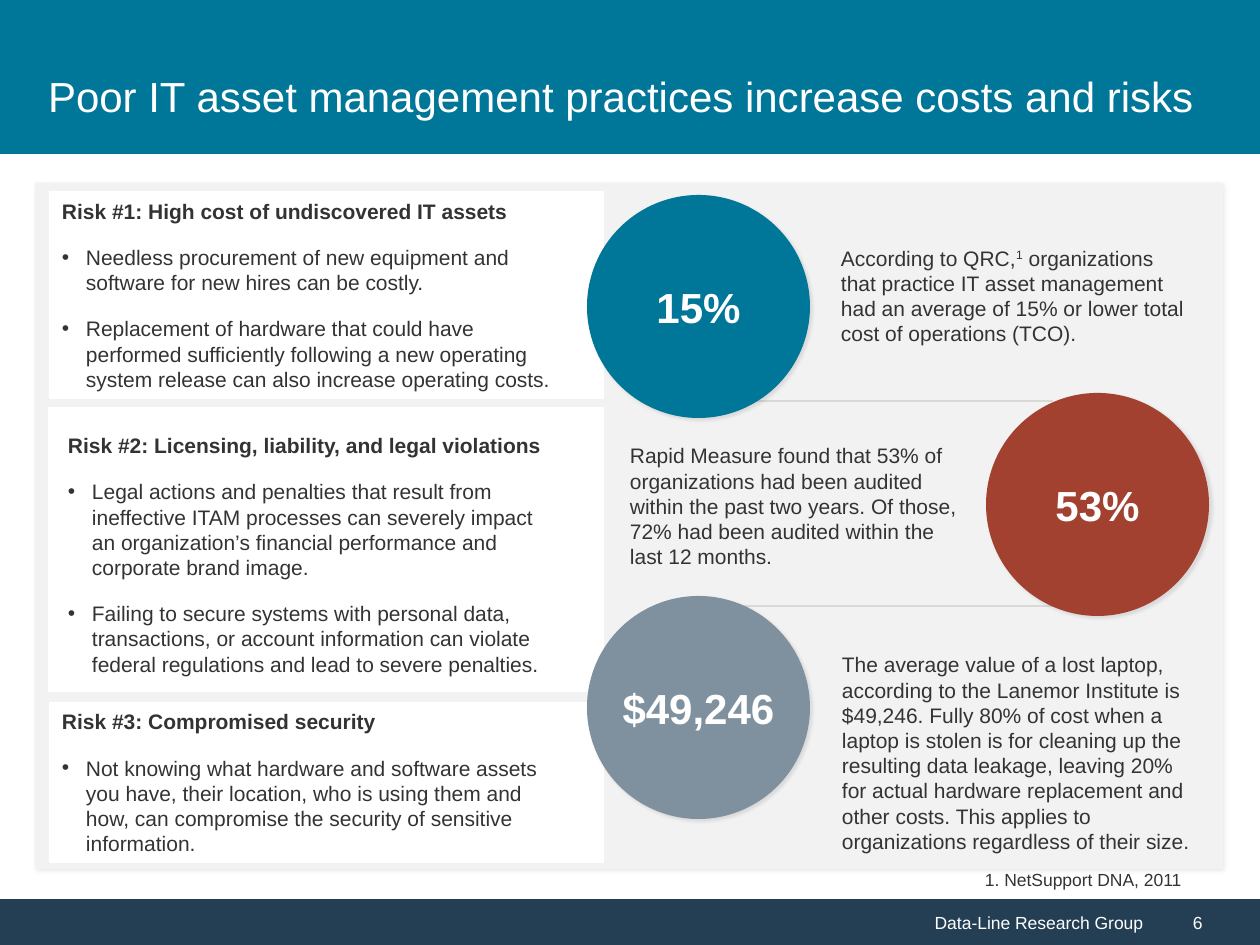
"""Build the slide on the costs and risks of poor IT asset management."""
from lxml import etree
from pptx import Presentation, util as u
from pptx.dml.color import RGBColor
from pptx.enum import shapes, text
from pptx.oxml.ns import qn

PX = 914400 / 126
TEAL = RGBColor(0x00, 0x76, 0x98)
NAVY = RGBColor(0x24, 0x3F, 0x54)
RED = RGBColor(0xA2, 0x41, 0x30)
SLATE = RGBColor(0x7F, 0x91, 0x9F)
PALE = RGBColor(0xF2, 0xF2, 0xF2)
RULE = RGBColor(0xD9, 0xD9, 0xD9)
INK = RGBColor(0x33, 0x33, 0x33)
WHITE = RGBColor(0xFF, 0xFF, 0xFF)
RECT, OVAL = shapes.MSO_SHAPE.RECTANGLE, shapes.MSO_SHAPE.OVAL
MID, TOP = text.MSO_ANCHOR.MIDDLE, text.MSO_ANCHOR.TOP
LEFT, RIGHT, CENTER = text.PP_ALIGN.LEFT, text.PP_ALIGN.RIGHT, text.PP_ALIGN.CENTER

deck = Presentation()
deck.slide_width, deck.slide_height = round(1260 * PX), round(945 * PX)
slide = deck.slides.add_slide(deck.slide_layouts[6])


def add_box(area, fill=None, kind=RECT, pads=(13, 6, 13, 6), anchor=MID, shade=False):
    place = [round(v * PX) for v in area]
    if fill is None:
        box = slide.shapes.add_textbox(*place)
    else:
        box = slide.shapes.add_shape(kind, *place)
        box.fill.solid()
        box.fill.fore_color.rgb = fill
        box.line.fill.background()
        box.shadow.inherit = False
    if shade:
        glow = etree.SubElement(box._element.spPr.find(qn("a:effectLst")), qn("a:outerShdw"),
                                blurRad="25400", dist="25400", dir="2700000",
                                algn="tl", rotWithShape="0")
        tint = etree.SubElement(glow, qn("a:srgbClr"), val="000000")
        etree.SubElement(tint, qn("a:alpha"), val="10000")
    frame = box.text_frame
    frame.word_wrap = True
    frame.vertical_anchor = anchor
    (frame.margin_left, frame.margin_top,
     frame.margin_right, frame.margin_bottom) = [round(v * PX) for v in pads]
    return frame


def add_run(para, words, size=12, ink=INK, bold=False, align=LEFT):
    para.alignment = align
    run = para.add_run()
    run.text = words
    font = run.font
    font.name, font.size, font.bold = "Arial", u.Pt(size), bold
    font.color.rgb = ink
    return run


foot = add_box((0, 899, 1156, 46), NAVY)
add_run(foot.paragraphs[0], "Data-Line Research Group", 10, WHITE, align=RIGHT)
page = add_box((1156, 899, 104, 46), NAVY, pads=(37, 6, 13, 6))
add_run(page.paragraphs[0], "6", 10, WHITE)
add_box((0, 0, 1260, 154), TEAL)
title = add_box((35, 35, 1190, 121))
add_run(title.paragraphs[0],
        "Poor IT asset management practices increase costs and risks", 24, WHITE)
add_box((35, 183, 1188, 686), PALE, shade=True)

RISKS = [
    ((49, 191, 555, 208), (13, 6, 49, 6), "Risk #1: High cost of undiscovered IT assets", [
        "Needless procurement of new equipment and software for new hires can be costly.",
        "Replacement of hardware that could have performed sufficiently following a new "
        "operating system release can also increase operating costs."]),
    ((48, 407, 556, 285), (20, 20, 49, 10),
     "Risk #2: Licensing, liability, and legal violations", [
        "Legal actions and penalties that result from ineffective ITAM processes can severely "
        "impact an organization’s financial performance and corporate brand image.",
        "Failing to secure systems with personal data, transactions, or account information "
        "can violate federal regulations and lead to severe penalties."]),
    ((49, 702, 555, 161), (13, 6, 49, 6), "Risk #3: Compromised security", [
        "Not knowing what hardware and software assets you have, their location, who is using "
        "them and how, can compromise the security of sensitive information."]),
]
for area, pads, head, points in RISKS:
    risk = add_box(area, WHITE, pads=pads)
    add_run(risk.paragraphs[0], head, bold=True)
    for point in points:
        para = risk.add_paragraph()
        para.space_before = u.Pt(12)
        props = para._p.get_or_add_pPr()
        props.set("marL", str(round(24 * PX)))
        props.set("indent", str(round(-24 * PX)))
        etree.SubElement(props, qn("a:buFont"), typeface="Arial")
        etree.SubElement(props, qn("a:buChar"), char="•")
        add_run(para, point)

for left, right, y in [(703, 1126, 606), (727, 1053, 401)]:
    line = slide.shapes.add_connector(shapes.MSO_CONNECTOR.STRAIGHT,
                                      *[round(v * PX) for v in (left, y, right, y)])
    line.line.color.rgb = RULE
    line.line.width = u.Pt(1.5)
    etree.SubElement(line._element.spPr, qn("a:effectLst"))

FACTS = [
    ((828, 238, 370, 115), MID, [
        "According to QRC,", "1",
        " organizations that practice IT asset management had an average of 15% or lower "
        "total cost of operations (TCO)."]),
    ((617, 437, 354, 140), TOP, [
        "Rapid Measure found that 53% of organizations had been audited within the past two "
        "years. Of those, 72% had been audited within the last 12 months."]),
    ((829, 646, 379, 217), TOP, [
        "The average value of a lost laptop, according to the Lanemor Institute is $49,246. "
        "Fully 80% of cost when a laptop is stolen is for cleaning up the resulting data "
        "leakage, leaving 20% for actual hardware replacement and other costs. This applies "
        "to organizations regardless of their size."]),
]
for area, anchor, parts in FACTS:
    fact = add_box(area, anchor=anchor)
    for part in parts:
        run = add_run(fact.paragraphs[0], part)
        if part == "1":
            run.font._element.set("baseline", "30000")

for x, y, fill, stat in [(986, 393, RED, "53%"), (587, 195, TEAL, "15%"),
                         (587, 596, SLATE, "$49,246")]:
    disc = add_box((x, y, 223, 223), fill, OVAL, (0, 0, 0, 0), shade=True)
    add_run(disc.paragraphs[0], stat, 24, WHITE, True, CENTER)

note = add_box((972, 863, 225, 34), anchor=TOP)
note.word_wrap = False
add_run(note.paragraphs[0], "1. NetSupport DNA, 2011", 10)

deck.save("out.pptx")
